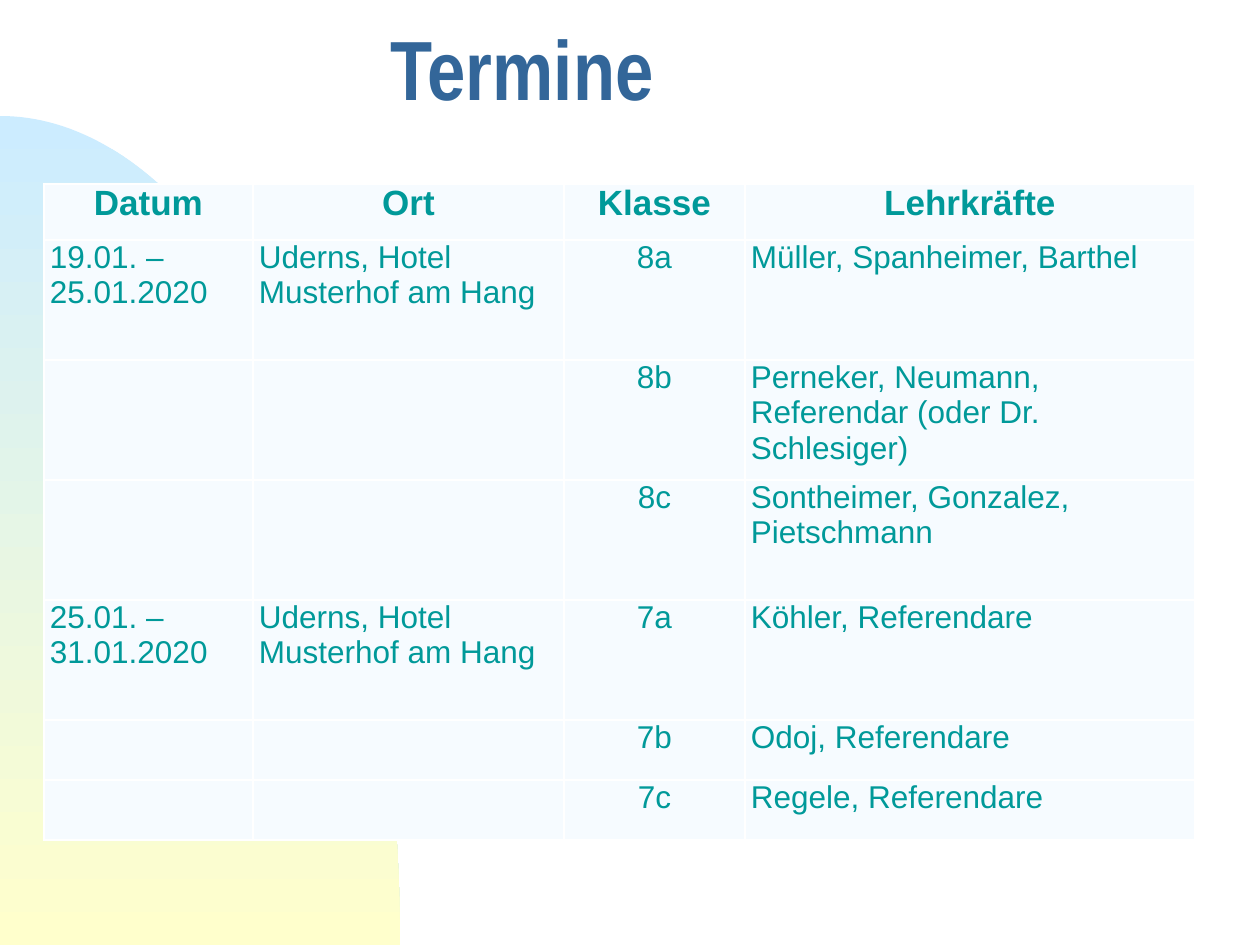
from math import cos, pi, sin

from lxml.etree import SubElement
from pptx import Presentation
from pptx.dml.color import RGBColor as RGB
from pptx.enum.text import MSO_ANCHOR as ANCHOR, MSO_AUTO_SIZE as FIT, PP_ALIGN as ALIGN
from pptx.oxml.ns import qn
from pptx.util import Pt

PX = 7257  # EMU per px at 126 px to the inch
W, H = 1260, 945

THEME = {
    "title": {"name": "Arial Narrow", "size": Pt(48), "bold": True},
    "head": {"name": "Arial", "size": Pt(20), "bold": True},
    "body": {"name": "Arial", "size": Pt(18), "bold": False},
    "title_color": "336699",
    "text_color": "009999",
    "cell": "F6FBFF",
    "border": "FFFFFF",
    "arc": ("CCECFF", "FFFFCC"),
}

HOTEL = "Uderns, Hotel Musterhof am Hang"
ROWS = [
    ("Datum", "Ort", "Klasse", "Lehrkräfte"),
    ("19.01. – 25.01.2020", HOTEL, "8a", "Müller, Spanheimer, Barthel"),
    ("", "", "8b", "Perneker, Neumann, Referendar (oder Dr. Schlesiger)"),
    ("", "", "8c", "Sontheimer, Gonzalez, Pietschmann"),
    ("25.01. –31.01.2020", HOTEL, "7a", "Köhler, Referendare"),
    ("", "", "7b", "Odoj, Referendare"),
    ("", "", "7c", "Regele, Referendare"),
]
COL_W = [209, 311, 181, 450]
ROW_H = [56, 120, 120, 120, 120, 60, 60]
CLASS_COL = 2


def set_font(font, values, color):
    for key, value in values.items():
        setattr(font, key, value)
    font.color.rgb = RGB.from_string(color)


def add_borders(cell):
    """Draw 1 pt lines on all sides; they must come before the cell fill."""
    tc_pr = cell._tc.get_or_add_tcPr()
    for side in ("lnL", "lnR", "lnT", "lnB"):
        ln = SubElement(tc_pr, qn(f"a:{side}"), w=str(Pt(1)))
        fill = SubElement(ln, qn("a:solidFill"))
        SubElement(fill, qn("a:srgbClr"), val=THEME["border"])


prs = Presentation()
prs.slide_width, prs.slide_height = W * PX, H * PX
s = prs.slides.add_slide(prs.slide_layouts[5])

# Title
title = s.shapes.title
title.left, title.top, title.width, title.height = (v * PX for v in (378, 0, 840, 158))
tf = title.text_frame
tf.text = "Termine"
tf.auto_size = FIT.NONE
tf.vertical_anchor = ANCHOR.MIDDLE
p = tf.paragraphs[0]
p.alignment = ALIGN.LEFT
p.line_spacing = 0.7
set_font(p.runs[0].font, THEME["title"], THEME["title_color"])

# Quarter ellipse around the lower left corner, behind everything
RX, RY, STEPS = 400, 829, 90
angles = [pi / 2 * i / STEPS for i in range(STEPS + 1)]
curve = [(RX * sin(a) * PX, (H - RY * cos(a)) * PX) for a in angles]
fb = s.shapes.build_freeform(0, H * PX)
fb.add_line_segments(curve, close=True)
arc = fb.convert_to_shape()
arc.shadow.inherit = False
arc.line.fill.background()
arc.fill.gradient()
arc.fill.gradient_angle = 270
for stop, color in zip(arc.fill.gradient_stops, THEME["arc"]):
    stop.color.rgb = RGB.from_string(color)
title.element.addprevious(arc.element)

# Table of dates
frame = s.shapes.add_table(len(ROWS), len(COL_W), 44 * PX, 184 * PX,
                           sum(COL_W) * PX, sum(ROW_H) * PX)
table = frame.table
table.first_row = table.horz_banding = False
for col, width in zip(table.columns, COL_W):
    col.width = width * PX
for row, height in zip(table.rows, ROW_H):
    row.height = height * PX

margins = {"margin_left": 6 * PX, "margin_right": 6 * PX, "margin_top": 0, "margin_bottom": 0}
for i, texts in enumerate(ROWS):
    for j, text in enumerate(texts):
        cell = table.cell(i, j)
        for key, value in margins.items():
            setattr(cell, key, value)
        add_borders(cell)
        cell.fill.solid()
        cell.fill.fore_color.rgb = RGB.from_string(THEME["cell"])
        p = cell.text_frame.paragraphs[0]
        p.alignment = ALIGN.CENTER if i == 0 or j == CLASS_COL else ALIGN.LEFT
        if text:
            r = p.add_run()
            r.text = text
            set_font(r.font, THEME["body" if i else "head"], THEME["text_color"])

prs.save("out.pptx")
